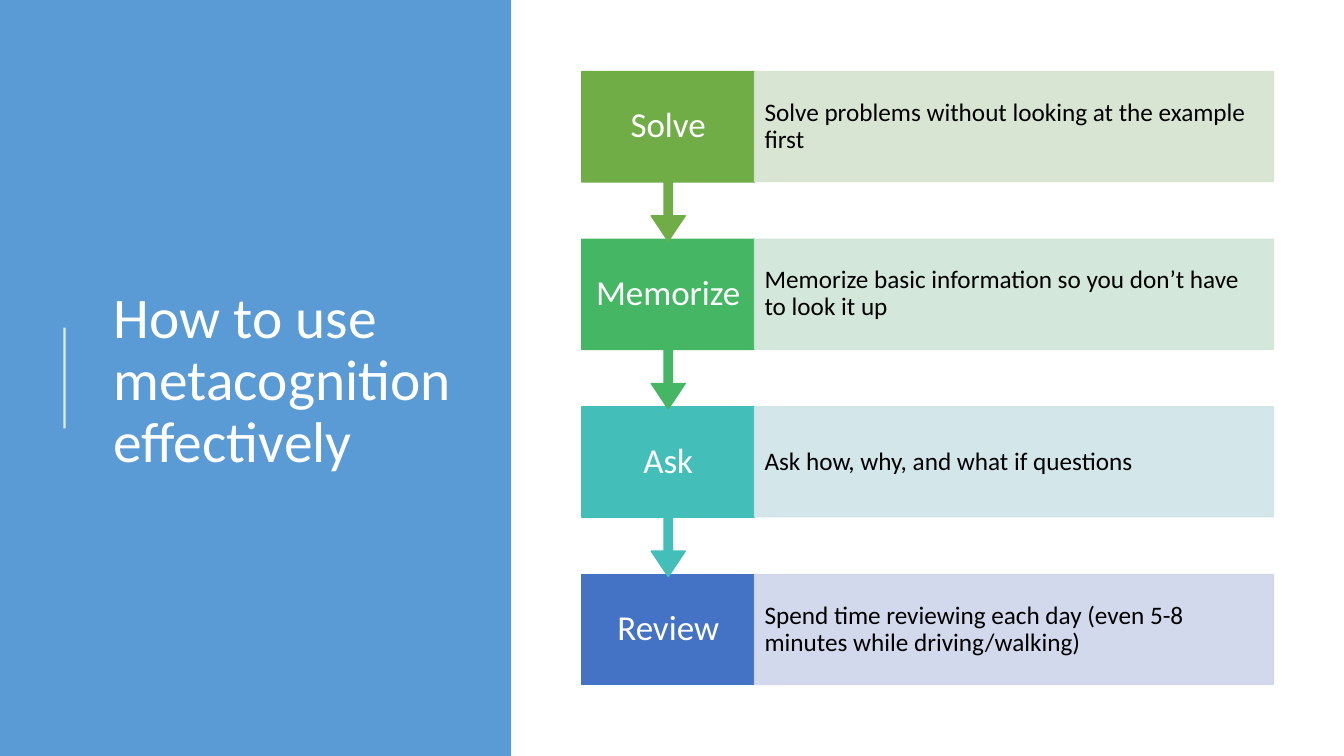
from pptx import Presentation
from pptx import util as u
from pptx.dml.color import RGBColor
from pptx.enum import shapes, text
from pptx.oxml.ns import qn
from lxml import etree

WHITE = RGBColor(0xFF, 0xFF, 0xFF)
BLACK = RGBColor(0, 0, 0)
BLUE = RGBColor(0x5B, 0x9B, 0xD5)

STEPS = [
    ("Solve", "Solve problems without looking at the example first",
     RGBColor(0x70, 0xAD, 0x47), RGBColor(0xD5, 0xE3, 0xCF)),
    ("Memorize", "Memorize basic information so you don’t have to look it up",
     RGBColor(0x45, 0xB6, 0x64), RGBColor(0xCF, 0xE5, 0xD8)),
    ("Ask", "Ask how, why, and what if questions",
     RGBColor(0x43, 0xBE, 0xB9), RGBColor(0xCF, 0xE5, 0xE8)),
    ("Review", "Spend time reviewing each day (even 5-8 minutes while driving/walking)",
     RGBColor(0x44, 0x72, 0xC4), RGBColor(0xCF, 0xD5, 0xEA)),
]


def inches(*sizes):
    return [u.Inches(size) for size in sizes]


def fade(shape, percent):
    for color in shape.element.spPr.iter(qn("a:srgbClr")):
        etree.SubElement(color, qn("a:alpha"), val=str(percent * 1000))


def block(parent, kind, box, color):
    shape = parent.add_shape(kind, *inches(*box))
    shape.shadow.inherit = False
    shape.fill.solid()
    shape.fill.fore_color.rgb = color
    shape.line.color.rgb = color
    shape.line.width = u.Pt(1)
    return shape


def write(shape, words, size, color, align, side=0.1, edge=0.05):
    frame = shape.text_frame
    frame.word_wrap = True
    frame.vertical_anchor = text.MSO_ANCHOR.MIDDLE
    frame.margin_left = frame.margin_right = u.Inches(side)
    frame.margin_top = frame.margin_bottom = u.Inches(edge)
    frame.text = words
    line = frame.paragraphs[0]
    line.alignment = align
    line.line_spacing = 0.9
    font = line.runs[0].font
    font.name = "Calibri"
    font.size = u.Pt(size)
    font.color.rgb = color


def panel(slide, left, top, width, height):
    back = block(slide.shapes, shapes.MSO_SHAPE.RECTANGLE,
                 (left, top, width, height), BLUE)
    back.line.fill.background()

    mark = left + 0.64
    middle = top + height / 2
    rule = slide.shapes.add_connector(
        shapes.MSO_CONNECTOR.STRAIGHT,
        *inches(mark, middle + 0.5, mark, middle - 0.5))
    rule.line.color.rgb = WHITE
    rule.line.width = u.Pt(1.5)
    fade(rule, 80)
    etree.SubElement(rule.element.spPr, qn("a:effectLst"))

    title = slide.shapes.add_textbox(
        *inches(left + 1.03, top + 0.78, width - 1.38, 6.02))
    write(title, "How to use metacognition effectively", 41, WHITE,
          text.PP_ALIGN.LEFT)


def step(group, box, tall, last, name, detail, dark, pale):
    left, top, width, height = box
    split = width / 4
    head = (left, top, split, height)
    if last:
        label = block(group, shapes.MSO_SHAPE.RECTANGLE, head, dark)
    else:
        arrow = block(group, shapes.MSO_SHAPE.UP_ARROW_CALLOUT,
                      (left, top, split, tall), dark)
        arrow.rotation = 180
        for i, ratio in enumerate((0.05, 0.1, 0.15, 0.65)):
            arrow.adjustments[i] = ratio
        label = group.add_textbox(*inches(*head))
    write(label, name, 25, WHITE, text.PP_ALIGN.CENTER, 0.12, 0.19)

    body = block(group, shapes.MSO_SHAPE.RECTANGLE,
                 (left + split, top, width - split, height), pale)
    fade(body, 90)
    write(body, detail, 18, BLACK, text.PP_ALIGN.LEFT, 0.1, 0.25)


def flow(slide, left, top, width, height):
    group = slide.shapes.add_group_shape().shapes
    tile = 1.09
    pitch = (height - tile) / (len(STEPS) - 1)
    for i in reversed(range(len(STEPS))):
        step(group, (left, top + i * pitch, width, tile), pitch + 0.02,
             i == len(STEPS) - 1, *STEPS[i])


def main():
    deck = Presentation()
    deck.slide_width, deck.slide_height = inches(13.33, 7.5)
    slide = deck.slides.add_slide(deck.slide_layouts[6])
    panel(slide, 0, 0, 5.07, 7.5)
    flow(slide, 5.77, 0.71, 6.86, 6.08)
    deck.save("out.pptx")


if __name__ == "__main__":
    main()
